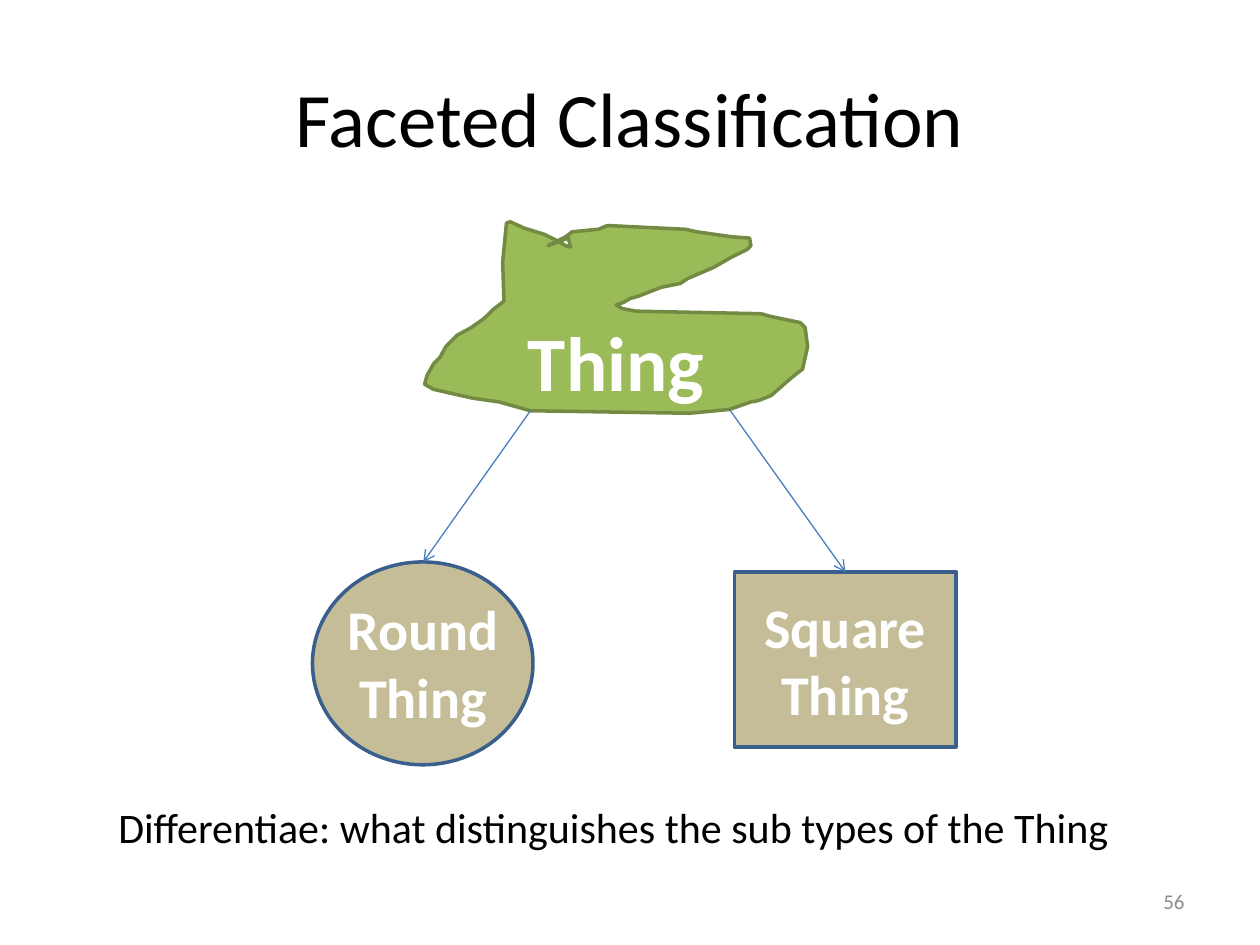
from dataclasses import dataclass

from lxml import etree
from pptx import Presentation
from pptx.dml.color import RGBColor
from pptx.enum.shapes import MSO_CONNECTOR as Connector, MSO_SHAPE as Preset
from pptx.enum.text import MSO_ANCHOR as Anchor, PP_ALIGN as Align
from pptx.oxml.ns import qn
from pptx.util import Inches, Pt


@dataclass(frozen=True)
class Theme:
    font: str = "Calibri"
    ink: str = "000000"
    muted: str = "8C8C8C"
    white: str = "FFFFFF"
    green: str = "9BBB59"
    green_edge: str = "738A42"
    sand: str = "C4BD97"
    blue_edge: str = "3A5F8C"
    arrow: str = "4B7EBC"
    title: int = 44
    label: int = 32
    body: int = 24
    number: int = 12
    edge: float = 2
    arrow_width: float = 0.75


THEME = Theme()

BLOB_POINTS = [
    (98, 19), (112, 12), (117, 8), (138, 6), (145, 3), (207, 6), (216, 8),
    (244, 12), (258, 13), (259, 19), (256, 22), (242, 29), (230, 36),
    (209, 45), (203, 49), (188, 52), (170, 59), (163, 61), (158, 64),
    (152, 66), (157, 69), (168, 71), (267, 73), (274, 75), (298, 80),
    (302, 84), (304, 99), (300, 117), (291, 124), (275, 138), (265, 142),
    (259, 143), (242, 149), (210, 152), (84, 150), (59, 143), (38, 140),
    (7, 133), (0, 129), (2, 122), (7, 113), (12, 108), (17, 99), (26, 90),
    (37, 84), (47, 77), (54, 70), (63, 63), (62, 32), (65, 1), (68, 0),
    (79, 5), (95, 10), (105, 15), (112, 19), (116, 20), (114, 13),
]


def write(shape, text, size, color, bold=False, align=Align.CENTER,
          anchor=Anchor.MIDDLE, wrap=True):
    frame = shape.text_frame
    frame.word_wrap = wrap
    frame.vertical_anchor = anchor
    para = frame.paragraphs[0]
    para.alignment = align
    span = para.add_run()
    span.text = text
    formats = {"name": THEME.font, "size": Pt(size), "bold": bold}
    for name, value in formats.items():
        setattr(span.font, name, value)
    span.font.color.rgb = RGBColor.from_string(color)


def paint(shape, fill, edge):
    shape.shadow.inherit = False
    shape.fill.solid()
    shape.fill.fore_color.rgb = RGBColor.from_string(fill)
    shape.line.color.rgb = RGBColor.from_string(edge)
    shape.line.width = Pt(THEME.edge)


def add_text(page, box, text, size, color, **formats):
    label = page.shapes.add_textbox(*map(Inches, box))
    write(label, text, size, color, **formats)


def add_node(page, box, preset):
    node = page.shapes.add_shape(preset, *map(Inches, box))
    paint(node, THEME.sand, THEME.blue_edge)
    return node


def add_blob(page, left, top):
    first, *rest = BLOB_POINTS
    builder = page.shapes.build_freeform(*first, scale=Inches(0.01))
    builder.add_line_segments(rest, close=True)
    blob = builder.convert_to_shape(Inches(left), Inches(top))
    paint(blob, THEME.green, THEME.green_edge)
    write(blob, "Thing", THEME.title, THEME.white, bold=True,
          anchor=Anchor.BOTTOM)


def add_arrow(page, start, end):
    arrow = page.shapes.add_connector(
        Connector.STRAIGHT, *map(Inches, start + end))
    arrow.line.color.rgb = RGBColor.from_string(THEME.arrow)
    arrow.line.width = Pt(THEME.arrow_width)
    head = etree.SubElement(arrow.line._get_or_add_ln(), qn("a:tailEnd"))
    head.set("type", "arrow")
    etree.SubElement(arrow._element.spPr, qn("a:effectLst"))


def add_tree(page, left, top):
    label = {"size": THEME.label, "color": THEME.white, "bold": True}
    add_node(page, (left, top + 2.7, 1.75, 1.61), Preset.OVAL)
    add_blob(page, left + 0.89, top)
    add_text(page, (left - 0.25, top + 2.8, 2.26, 1.39), "Round Thing", **label)
    square = add_node(
        page, (left + 3.35, top + 2.78, 1.76, 1.39), Preset.RECTANGLE)
    write(square, "Square Thing", **label)
    add_arrow(page, (left + 1.73, top + 1.5), (left + 0.88, top + 2.7))
    add_arrow(page, (left + 3.31, top + 1.49), (left + 4.23, top + 2.78))


def main():
    deck = Presentation()
    deck.slide_width, deck.slide_height = Inches(10), Inches(7.5)
    page = deck.slides.add_slide(deck.slide_layouts[6])
    add_text(page, (0.5, 0.3, 9, 1.25), "Faceted Classification",
             THEME.title, THEME.ink)
    add_tree(page, 2.48, 1.76)
    add_text(page, (0.84, 6.31, 8.35, 0.5),
             "Differentiae: what distinguishes the sub types of the Thing",
             THEME.body, THEME.ink, align=Align.LEFT, anchor=Anchor.TOP,
             wrap=False)
    add_text(page, (7.17, 6.95, 2.33, 0.4), "56", THEME.number, THEME.muted,
             align=Align.RIGHT)
    deck.save("out.pptx")


if __name__ == "__main__":
    main()
